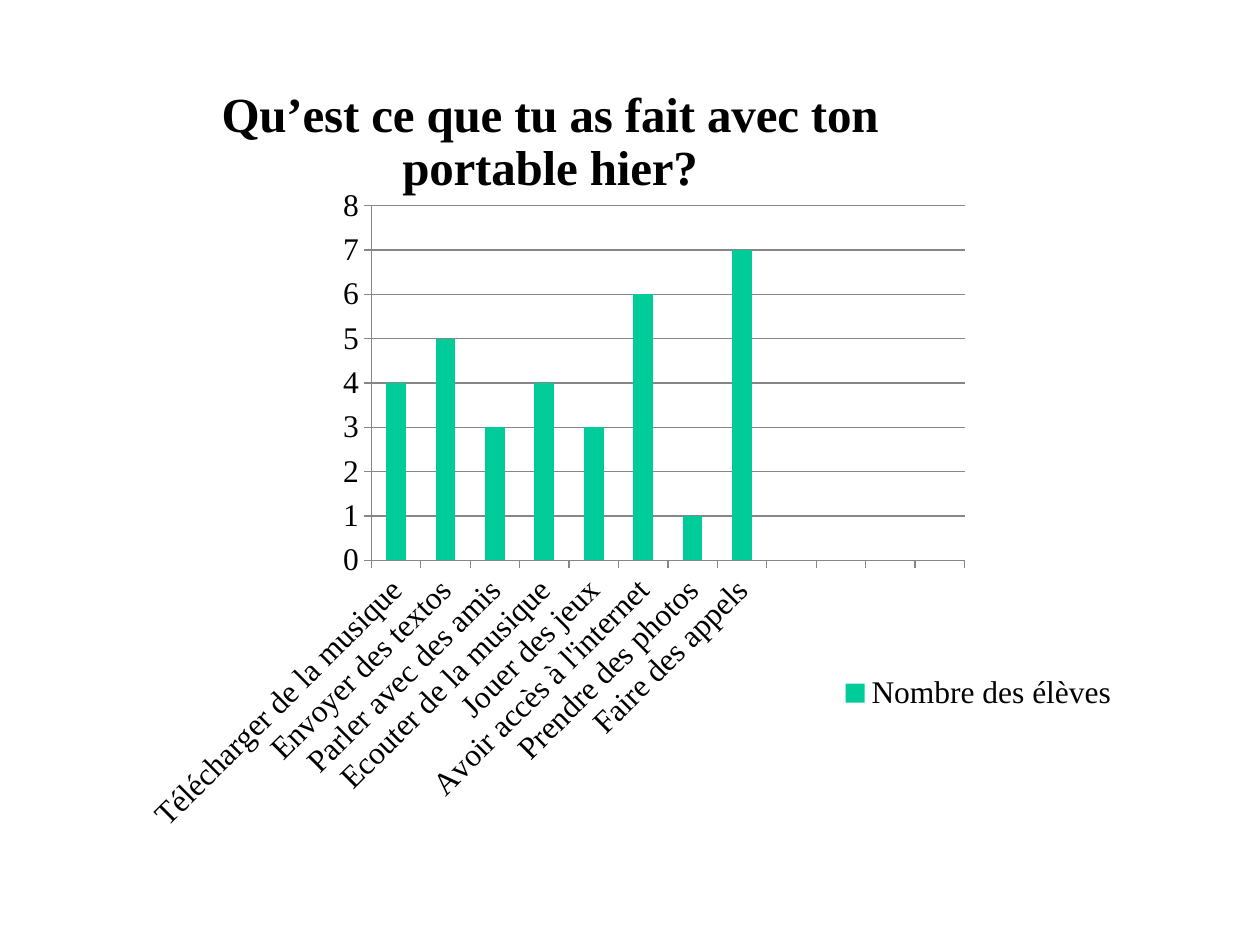
from pptx import Presentation, util as u
from pptx.chart.data import CategoryChartData
from pptx.dml.color import RGBColor
from pptx.enum import chart as kinds
from pptx.oxml import parse_xml
from pptx.oxml.ns import nsdecls

PX = u.Inches(1) / 126
FONT = "Times New Roman"
BLACK, GREEN, GREY = "000000", "00CC99", "868686"
TITLE = "Qu’est ce que tu as fait avec ton portable hier?"
SERIES = "Nombre des élèves"
ACTIVITIES = {
    "Télécharger de la musique": 4,
    "Envoyer des textos": 5,
    "Parler avec des amis": 3,
    "Ecouter de la musique": 4,
    "Jouer des jeux": 3,
    "Avoir accès à l'internet": 6,
    "Prendre des photos": 1,
    "Faire des appels": 7,
}
EMPTY_SLOTS = 4


def px(length):
    return u.Emu(round(length * PX))


def color(value):
    return RGBColor.from_string(value)


def style_font(font, size, bold=False):
    font.name = FONT
    font.size = u.Pt(size)
    font.bold = bold
    font.color.rgb = color(BLACK)


def style_line(line):
    line.color.rgb = color(GREY)
    line.width = u.Pt(0.75)


def set_layout(parent, index, target="", **fractions):
    """Place a chart part by fractions of the chart area."""
    for old in parent.xpath("c:layout"):
        parent.remove(old)
    parts = [f'<c:layoutTarget val="{target}"/>'] if target else []
    parts += [f'<c:{key}Mode val="edge"/>' for key in "xy"]
    parts += [f'<c:{key} val="{value}"/>' for key, value in fractions.items()]
    parent.insert(index, parse_xml(
        f'<c:layout {nsdecls("c")}><c:manualLayout>{"".join(parts)}'
        "</c:manualLayout></c:layout>"))


def add_column_chart(page):
    data = CategoryChartData()
    data.categories = list(ACTIVITIES) + [""] * EMPTY_SLOTS
    data.add_series(SERIES, list(ACTIVITIES.values()) + [None] * EMPTY_SLOTS)
    chart = page.shapes.add_chart(
        kinds.XL_CHART_TYPE.COLUMN_CLUSTERED,
        px(95), px(66), px(1071), px(804), data).chart
    style_font(chart.font, 18)

    # Columns
    plot = chart.plots[0]
    plot.vary_by_categories = False
    plot.gap_width = 150
    fill = plot.series[0].format.fill
    fill.solid()
    fill.fore_color.rgb = color(GREEN)
    return chart


def style_axes(chart):
    for axis in (chart.category_axis, chart.value_axis):
        axis.major_tick_mark = kinds.XL_TICK_MARK.OUTSIDE
        axis.minor_tick_mark = kinds.XL_TICK_MARK.NONE
        style_line(axis.format.line)
        style_font(axis.tick_labels.font, 18)
    # Slanted category labels
    for body in chart.category_axis._element.xpath("c:txPr/a:bodyPr"):
        body.set("rot", "-2700000")
        body.set("vert", "horz")
    values = chart.value_axis
    values.minimum_scale, values.maximum_scale, values.major_unit = 0, 8, 1
    values.has_major_gridlines = True
    style_line(values.major_gridlines.format.line)


def add_title(chart):
    chart.has_title = True
    frame = chart.chart_title.text_frame
    frame.text = TITLE
    style_font(frame.paragraphs[0].runs[0].font, 28, bold=True)


def add_legend(chart):
    chart.has_legend = True
    chart.legend.position = kinds.XL_LEGEND_POSITION.RIGHT
    chart.legend.include_in_layout = False
    style_font(chart.legend.font, 18)


def place_parts(chart):
    space = chart._chartSpace
    set_layout(space.xpath("c:chart/c:title")[0], 1, x=0.11, y=0.01)
    set_layout(space.xpath("c:chart/c:plotArea")[0], 0, "inner",
               x=0.258, y=0.174, w=0.554, h=0.441)
    set_layout(space.xpath("c:chart/c:legend")[0], 1,
               x=0.69, y=0.75, w=0.27, h=0.06)


def main():
    deck = Presentation()
    deck.slide_width, deck.slide_height = u.Inches(10), u.Inches(7.5)
    page = deck.slides.add_slide(deck.slide_layouts[6])
    chart = add_column_chart(page)
    style_axes(chart)
    add_title(chart)
    add_legend(chart)
    place_parts(chart)
    deck.save("out.pptx")


if __name__ == "__main__":
    main()
